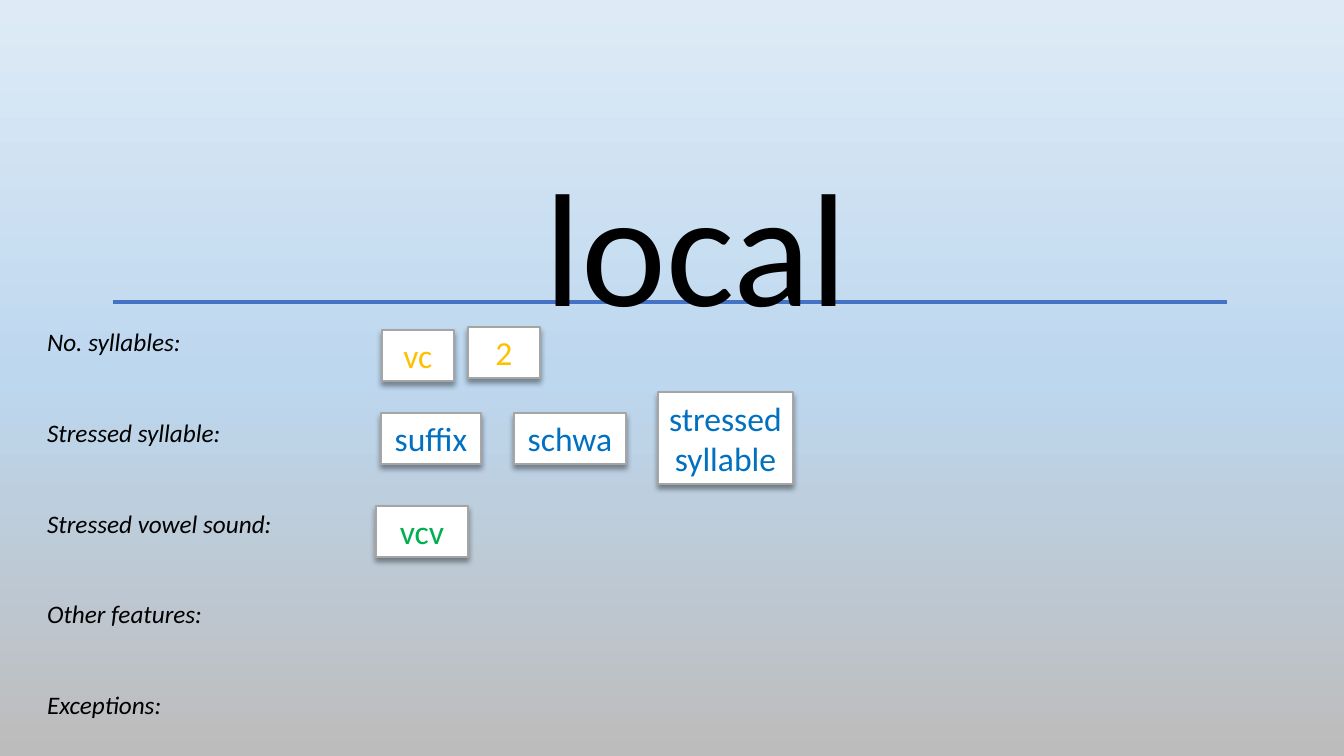
from copy import deepcopy
from lxml.etree import SubElement
from pptx import Presentation
from pptx.dml.color import RGBColor
from pptx.enum.shapes import MSO_CONNECTOR as Connector, MSO_SHAPE as Shape
from pptx.enum.text import MSO_ANCHOR as Anchor, MSO_AUTO_SIZE as AutoSize, PP_ALIGN as Align
from pptx.oxml.ns import qn
from pptx.util import Inches, Pt

THEME = {
    "font": "Calibri",
    "backdrop": [(0, "DEEBF7"), (0.5, "BDD7EE"), (1, "BDBCBC")],
    "ink": "000000", "rule": "4472C4", "card": "FFFFFF", "edge": "A5A5A5",
    "gold": "FFC000", "blue": "0070C0", "green": "00B050",
    "word_size": 115, "card_size": 24, "label_size": 18, "label_gap": 43.3,
}
PX = Inches(7.5) / 756


def place(shape, *bounds):
    shape.left, shape.top, shape.width, shape.height = [round(n * PX) for n in bounds]


def write(shape, text, size, color, align, anchor, wrap=False, italic=None):
    frame = shape.text_frame
    frame.text = text
    frame.word_wrap = wrap
    frame.auto_size = AutoSize.NONE
    frame.vertical_anchor = anchor
    for para in frame.paragraphs:
        para.alignment = align
        for span in para.runs:
            span.font.name = THEME["font"]
            span.font.size = Pt(size)
            span.font.italic = italic
            span.font.color.rgb = RGBColor.from_string(color)


deck = Presentation()
deck.slide_width, deck.slide_height = round(1344 * PX), round(756 * PX)
page = deck.slides.add_slide(deck.slide_layouts[1])

backdrop = page.background.fill
backdrop.gradient()
backdrop.gradient_angle = 270
stop_list = page.element.find(".//" + qn("a:gsLst"))
stop_list.append(deepcopy(stop_list[-1]))
for stop, (position, color) in zip(backdrop.gradient_stops, THEME["backdrop"]):
    stop.position = position
    stop.color.rgb = RGBColor.from_string(color)

word = page.shapes.title
place(word, 200, 140, 992, 206)
write(word, "local", THEME["word_size"], THEME["ink"], Align.CENTER, Anchor.TOP, wrap=True)

rule = page.shapes.add_connector(
    Connector.STRAIGHT, *[round(n * PX) for n in (113, 302, 1227, 302)])
rule.line.color.rgb = RGBColor.from_string(THEME["rule"])
rule.line.width = Pt(3)
SubElement(rule.element.spPr, qn("a:effectLst"))
word.element.addprevious(rule.element)

labels = page.placeholders[1]
place(labels, 37, 321, 247, 407)
write(labels, "No. syllables:\nStressed syllable:\nStressed vowel sound:\nOther features:\nExceptions:",
      THEME["label_size"], THEME["ink"], Align.LEFT, Anchor.TOP, italic=True)
for index, para in enumerate(labels.text_frame.paragraphs):
    para.space_before = Pt(THEME["label_gap"] if index else 0)
    properties = para._p.get_or_add_pPr()
    properties.set("marL", "0")
    properties.set("indent", "0")
    SubElement(properties, qn("a:buNone"))

cards = [
    ("schwa", "blue", 514, 413, 112, 51),
    ("suffix", "blue", 381, 413, 100, 51),
    ("stressed\nsyllable", "blue", 658, 392, 135, 92),
    ("vcv", "green", 376, 506, 92, 51),
    ("vc", "gold", 382, 330, 72, 51),
    ("2", "gold", 468, 327, 72, 51),
]
for text, color, *bounds in cards:
    card = page.shapes.add_shape(Shape.RECTANGLE, 0, 0, 0, 0)
    place(card, *bounds)
    card.fill.solid()
    card.fill.fore_color.rgb = RGBColor.from_string(THEME["card"])
    card.line.color.rgb = RGBColor.from_string(THEME["edge"])
    card.line.width = Pt(1)
    card.shadow.inherit = False
    effects = card.element.spPr.find(qn("a:effectLst"))
    shadow = SubElement(effects, qn("a:outerShdw"), blurRad=str(Pt(4)), dist=str(Pt(3)),
                        dir=str(90 * 60000), rotWithShape="0")
    shade = SubElement(shadow, qn("a:srgbClr"), val=THEME["ink"])
    SubElement(shade, qn("a:alpha"), val="40000")
    write(card, text, THEME["card_size"], THEME[color], Align.CENTER, Anchor.MIDDLE)

deck.save("out.pptx")
